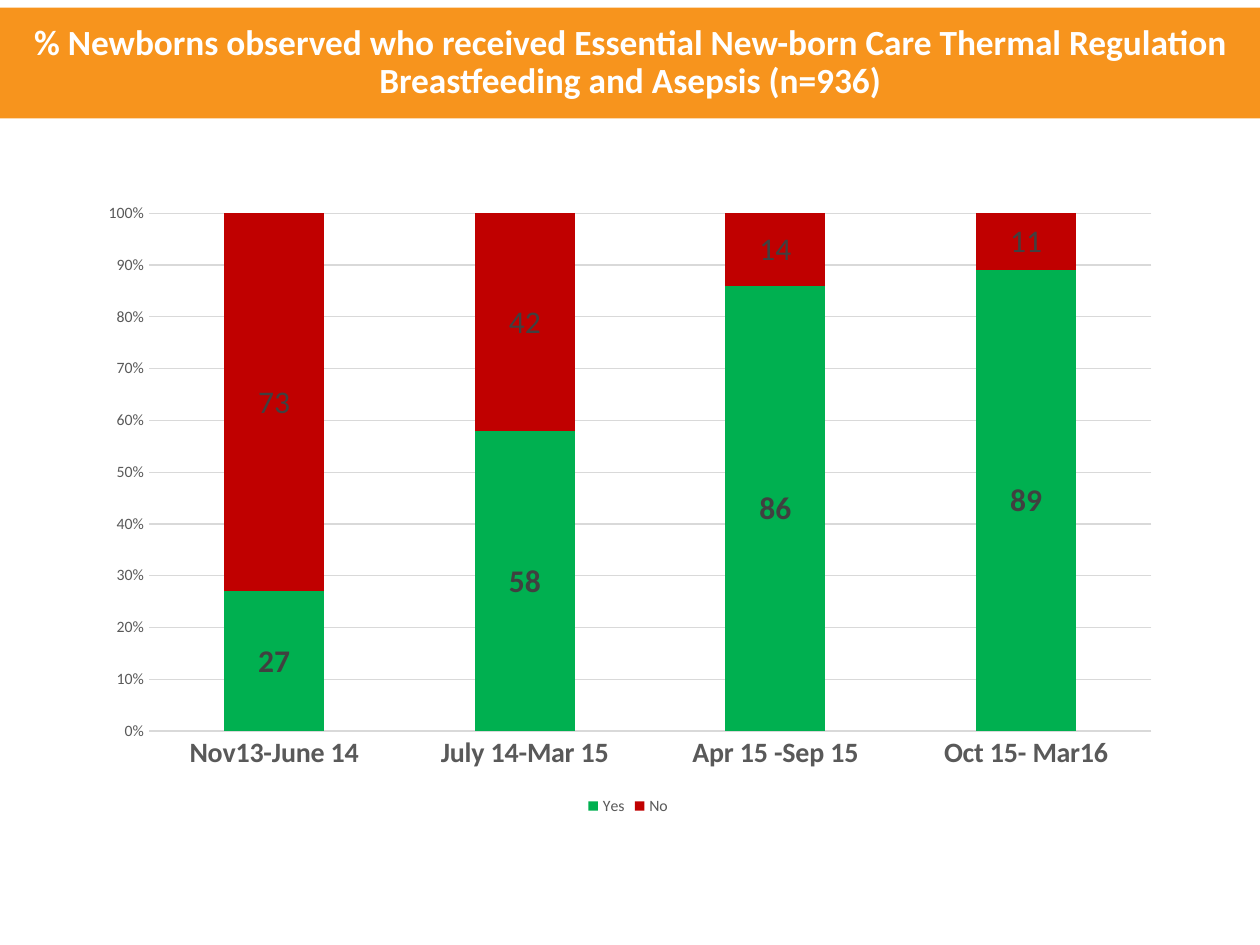
from dataclasses import dataclass

from pptx import Presentation
from pptx import util as u
from pptx.chart.data import CategoryChartData
from pptx.dml.color import RGBColor
from pptx.enum import chart as ch
from pptx.enum import shapes, text


@dataclass(frozen=True)
class Theme:
    font: str = "Calibri"
    banner: str = "F7941D"
    banner_text: str = "FFFFFF"
    yes: str = "00B050"
    no: str = "C00000"
    axis_text: str = "595959"
    label_text: str = "404040"
    grid: str = "D9D9D9"
    title_size: float = 20.2
    label_size: float = 18
    category_size: float = 16
    chart_size: float = 10
    small_size: float = 9


class SlideBuilder:
    def __init__(self, page, theme):
        self.page = page
        self.theme = theme

    def style_font(self, font, size, color, bold=False):
        font.name = self.theme.font
        font.size = u.Pt(size)
        font.bold = bold
        font.color.rgb = RGBColor.from_string(color)

    def style_line(self, line):
        line.color.rgb = RGBColor.from_string(self.theme.grid)
        line.width = u.Pt(0.75)

    def banner(self, title, left, top, width, height):
        box = self.page.shapes.add_shape(
            shapes.MSO_SHAPE.RECTANGLE, *map(u.Inches, (left, top, width, height)))
        box.shadow.inherit = False
        box.fill.solid()
        box.fill.fore_color.rgb = RGBColor.from_string(self.theme.banner)
        box.line.fill.background()
        frame = box.text_frame
        frame.word_wrap = True
        frame.vertical_anchor = text.MSO_ANCHOR.MIDDLE
        paragraph = frame.paragraphs[0]
        paragraph.text = title
        paragraph.alignment = text.PP_ALIGN.CENTER
        paragraph.line_spacing = 0.9
        self.style_font(paragraph.font, self.theme.title_size,
                        self.theme.banner_text, bold=True)

    def stacked_chart(self, categories, series, left, top, width, height):
        theme = self.theme
        data = CategoryChartData()
        data.categories = categories
        for name, values, _, _ in series:
            data.add_series(name, values)
        chart = self.page.shapes.add_chart(
            ch.XL_CHART_TYPE.COLUMN_STACKED_100,
            *map(u.Inches, (left, top, width, height)), data).chart
        self.style_font(chart.font, theme.chart_size, "000000")
        chart.has_title = False
        chart.has_legend = True
        chart.legend.position = ch.XL_LEGEND_POSITION.BOTTOM
        chart.legend.include_in_layout = False
        self.style_font(chart.legend.font, theme.small_size, theme.axis_text)
        self.style_axes(chart)
        plot = chart.plots[0]
        plot.gap_width = 150
        plot.overlap = 100
        plot.vary_by_categories = False
        for column, (_, _, color, bold) in zip(plot.series, series):
            column.format.fill.solid()
            column.format.fill.fore_color.rgb = RGBColor.from_string(color)
            column.invert_if_negative = False
            labels = column.data_labels
            labels.show_value = True
            labels.position = ch.XL_LABEL_POSITION.CENTER
            self.style_font(labels.font, theme.label_size, theme.label_text, bold)

    def style_axes(self, chart):
        theme = self.theme
        for axis in (chart.category_axis, chart.value_axis):
            axis.major_tick_mark = ch.XL_TICK_MARK.NONE
            axis.minor_tick_mark = ch.XL_TICK_MARK.NONE
        self.style_font(chart.category_axis.tick_labels.font,
                        theme.category_size, theme.axis_text, bold=True)
        self.style_line(chart.category_axis.format.line)
        values = chart.value_axis
        values.minimum_scale = 0
        values.maximum_scale = 1
        values.major_unit = 0.1
        values.has_major_gridlines = True
        self.style_line(values.major_gridlines.format.line)
        values.format.line.fill.background()
        values.tick_labels.number_format = "0%"
        values.tick_labels.number_format_is_linked = False
        self.style_font(values.tick_labels.font, theme.small_size, theme.axis_text)


def main():
    theme = Theme()
    deck = Presentation()
    deck.slide_width = u.Inches(10)
    deck.slide_height = u.Inches(7.5)
    builder = SlideBuilder(deck.slides.add_slide(deck.slide_layouts[6]), theme)
    builder.stacked_chart(
        ["Nov13-June 14", "July 14-Mar 15", "Apr 15 -Sep 15", "Oct 15- Mar16"],
        [("Yes", (27, 58, 86, 89), theme.yes, True),
         ("No ", (73, 42, 14, 11), theme.no, False)],
        0.69, 1.52, 8.62, 4.99)
    builder.banner(
        "% Newborns observed who received Essential New-born Care Thermal "
        "Regulation Breastfeeding and Asepsis (n=936)",
        0, 0.06, 10, 0.88)
    deck.save("out.pptx")


if __name__ == "__main__":
    main()
